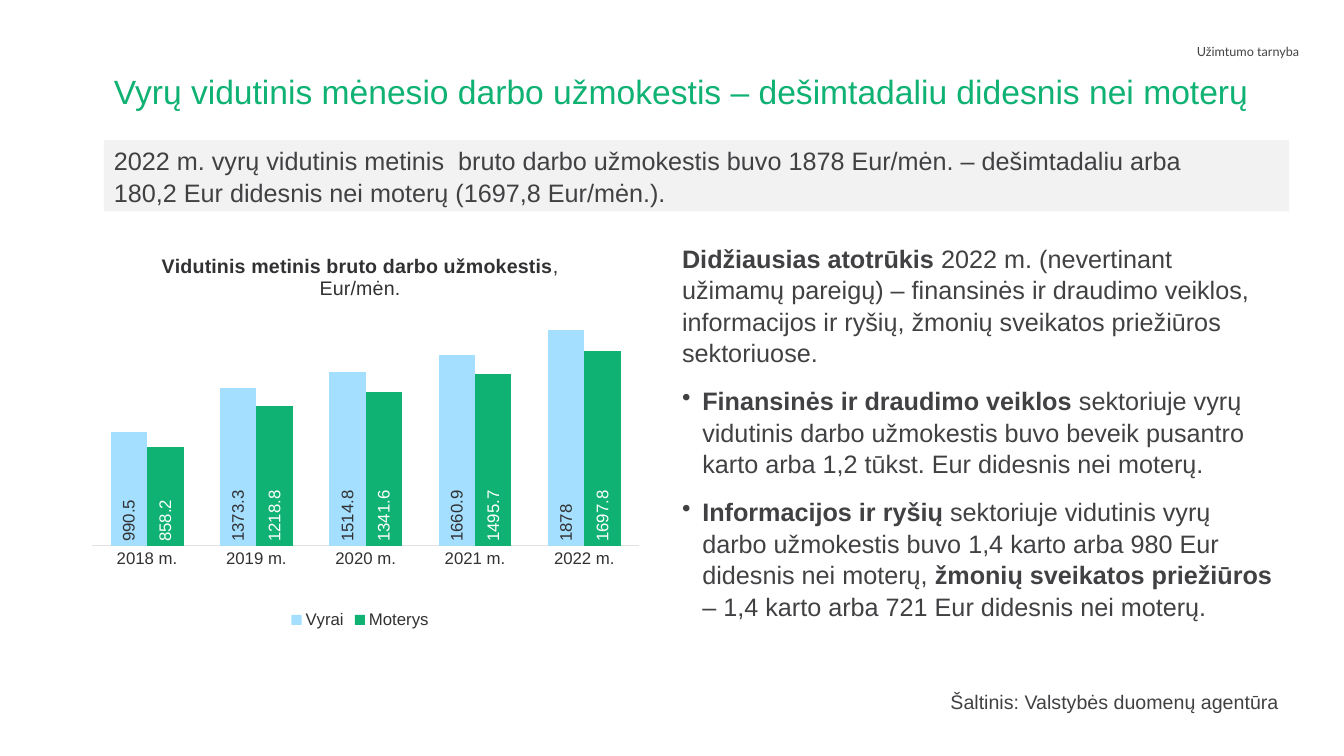
from dataclasses import dataclass

from lxml import etree
from pptx import Presentation
from pptx.chart.data import CategoryChartData
from pptx.dml.color import RGBColor
from pptx.enum.chart import XL_CHART_TYPE, XL_LABEL_POSITION, XL_LEGEND_POSITION, XL_TICK_MARK
from pptx.enum.shapes import MSO_SHAPE
from pptx.enum.text import MSO_ANCHOR, PP_ALIGN
from pptx.oxml.ns import qn
from pptx.util import Cm, Pt

COLUMNS = XL_CHART_TYPE.COLUMN_CLUSTERED
INSIDE_BASE = XL_LABEL_POSITION.INSIDE_BASE
LEGEND_BOTTOM = XL_LEGEND_POSITION.BOTTOM
NO_TICKS = XL_TICK_MARK.NONE
RECTANGLE = MSO_SHAPE.RECTANGLE
TOP, MIDDLE = MSO_ANCHOR.TOP, MSO_ANCHOR.MIDDLE
LEFT, RIGHT = PP_ALIGN.LEFT, PP_ALIGN.RIGHT


@dataclass(frozen=True)
class Theme:
    font: str = "Arial"
    header_font: str = "Lato"
    green: str = "0FB273"
    blue: str = "A4DFFF"
    text: str = "414144"
    header: str = "434244"
    chart_text: str = "313133"
    axis: str = "E2E2E3"
    band: str = "F2F2F2"
    white: str = "FFFFFF"
    title_size: int = 24
    body_size: int = 18
    note_size: int = 14
    chart_size: int = 12
    header_size: int = 9


THEME = Theme()
YEARS = [f"{year} m." for year in range(2018, 2023)]
# name, values, bar colour, label colour
WAGES = [
    ("Vyrai", (990.5, 1373.3, 1514.8, 1660.9, 1878), THEME.blue, THEME.chart_text),
    ("Moterys", (858.2, 1218.8, 1341.6, 1495.7, 1697.8), THEME.green, THEME.white),
]
# Each paragraph is a list of (text, bold) parts
FINDINGS = [
    [("Didžiausias atotrūkis ", True),
     ("2022 m. (nevertinant užimamų pareigų) – finansinės ir draudimo veiklos, "
      "informacijos ir ryšių, žmonių sveikatos priežiūros sektoriuose.", False)],
    [("Finansinės ir draudimo veiklos ", True),
     ("sektoriuje vyrų vidutinis darbo užmokestis buvo beveik pusantro karto "
      "arba 1,2 tūkst. Eur didesnis nei moterų.", False)],
    [("Informacijos ir ryšių", True),
     (" sektoriuje vidutinis vyrų darbo užmokestis buvo 1,4 karto arba 980 Eur "
      "didesnis nei moterų, ", False),
     ("žmonių sveikatos priežiūros ", True),
     ("– 1,4 karto arba 721 Eur didesnis nei moterų.", False)],
]


def style_font(font, size, color, name=THEME.font):
    font.size = Pt(size)
    font.name = name
    font.color.rgb = RGBColor.from_string(color)


def style_runs(p, size, color, name=THEME.font):
    for r in p.runs:
        style_font(r.font, size, color, name)


def add_parts(p, parts, size, color):
    for text, bold in parts:
        r = p.add_run()
        r.text = text
        r.font.bold = bold
    style_runs(p, size, color)


def add_bullet(p):
    pPr = p._p.get_or_add_pPr()
    pPr.set("marL", str(Cm(0.51)))
    pPr.set("indent", str(-Cm(0.51)))
    etree.SubElement(pPr, qn("a:buChar")).set("char", "•")


def add_text_frame(slide, left, top, width, height):
    tf = slide.shapes.add_textbox(Cm(left), Cm(top), Cm(width), Cm(height)).text_frame
    tf.word_wrap = True
    tf.vertical_anchor = TOP
    return tf


def add_line(slide, text, box, size, color, name=THEME.font, align=LEFT):
    p = add_text_frame(slide, *box).paragraphs[0]
    p.text = text
    p.alignment = align
    style_runs(p, size, color, name)
    return p


def add_band(slide, text, left, top, width, height):
    sp = slide.shapes.add_shape(RECTANGLE, Cm(left), Cm(top), Cm(width), Cm(height))
    sp.shadow.inherit = False
    sp.fill.solid()
    sp.fill.fore_color.rgb = RGBColor.from_string(THEME.band)
    sp.line.fill.background()
    tf = sp.text_frame
    tf.word_wrap = True
    tf.vertical_anchor = MIDDLE
    p = tf.paragraphs[0]
    p.text = text
    p.alignment = LEFT
    p.line_spacing = 1.04
    style_runs(p, THEME.body_size, THEME.text)


def add_findings(slide, left, top, width, height):
    tf = add_text_frame(slide, left, top, width, height)
    for i, parts in enumerate(FINDINGS):
        p = tf.add_paragraph() if i else tf.paragraphs[0]
        p.space_after = Pt(12)
        p.line_spacing = 1.04
        if i:
            add_bullet(p)
        add_parts(p, parts, THEME.body_size, THEME.text)


def set_plot_area(chart, x, y, w, h):
    """Place the inner plot area, in fractions of the chart."""
    plot_area = chart._chartSpace.chart.plotArea
    for old in plot_area.findall(qn("c:layout")):
        plot_area.remove(old)
    layout = etree.Element(qn("c:layout"))
    manual = etree.SubElement(layout, qn("c:manualLayout"))
    settings = [("layoutTarget", "inner"), ("xMode", "edge"), ("yMode", "edge"),
                ("x", x), ("y", y), ("w", w), ("h", h)]
    for tag, value in settings:
        etree.SubElement(manual, qn(f"c:{tag}")).set("val", str(value))
    plot_area.insert(0, layout)


def style_series(series, color, label_color):
    series.format.fill.solid()
    series.format.fill.fore_color.rgb = RGBColor.from_string(color)
    labels = series.data_labels
    labels.show_value = True
    labels.position = INSIDE_BASE
    style_font(labels.font, THEME.chart_size, label_color)
    body = labels._element.find(qn("c:txPr")).find(qn("a:bodyPr"))
    body.set("rot", "-5400000")
    body.set("vert", "horz")


def add_wage_chart(slide, left, top, width, height):
    data = CategoryChartData()
    data.categories = YEARS
    for name, values, *_ in WAGES:
        data.add_series(name, values)
    chart = slide.shapes.add_chart(
        COLUMNS, Cm(left), Cm(top), Cm(width), Cm(height), data).chart
    style_font(chart.font, THEME.chart_size, THEME.chart_text)

    tf = chart.chart_title.text_frame
    add_parts(tf.paragraphs[0], [("Vidutinis metinis bruto darbo užmokestis", True), (",", False)],
              THEME.note_size, THEME.chart_text)
    add_parts(tf.add_paragraph(), [("Eur/mėn.", False)], THEME.note_size, THEME.chart_text)
    chart.chart_title.include_in_layout = False

    chart.has_legend = True
    chart.legend.position = LEGEND_BOTTOM
    chart.legend.include_in_layout = False
    style_font(chart.legend.font, THEME.chart_size, THEME.chart_text)

    value_axis, category_axis = chart.value_axis, chart.category_axis
    value_axis.minimum_scale, value_axis.maximum_scale = 0, 2000
    value_axis.has_major_gridlines = False
    value_axis.visible = False
    category_axis.major_tick_mark = NO_TICKS
    category_axis.format.line.color.rgb = RGBColor.from_string(THEME.axis)
    category_axis.format.line.width = Pt(0.75)

    plot = chart.plots[0]
    plot.gap_width, plot.overlap = 100, 0
    plot.vary_by_categories = False
    for series, (_, _, color, label_color) in zip(plot.series, WAGES):
        style_series(series, color, label_color)
    set_plot_area(chart, 0.03, 0.2, 0.96, 0.58)


def main():
    prs = Presentation()
    prs.slide_width, prs.slide_height = Cm(33.87), Cm(19.05)
    slide = prs.slides.add_slide(prs.slide_layouts[6])
    add_line(slide, "Užimtumo tarnyba", (21.56, 0.99, 11.43, 1.19),
             THEME.header_size, THEME.header, THEME.header_font, RIGHT)
    title = add_line(
        slide, "Vyrų vidutinis mėnesio darbo užmokestis – dešimtadaliu didesnis nei moterų",
        (2.62, 1.78, 30.5, 1.42), THEME.title_size, THEME.green)
    title.line_spacing = 0.9
    add_band(slide, "2022 m. vyrų vidutinis metinis  bruto darbo užmokestis buvo 1878 Eur/mėn. "
             "– dešimtadaliu arba \v180,2 Eur didesnis nei moterų (1697,8 Eur/mėn.).",
             2.62, 3.53, 29.87, 1.8)
    add_wage_chart(slide, 1.9, 5.97, 14.35, 9.98)
    add_findings(slide, 16.94, 5.97, 15.54, 9.55)
    add_line(slide, "Šaltinis: Valstybės duomenų agentūra", (16.94, 17.27, 15.54, 0.86),
             THEME.note_size, THEME.text, align=RIGHT)
    prs.save("out.pptx")


if __name__ == "__main__":
    main()
